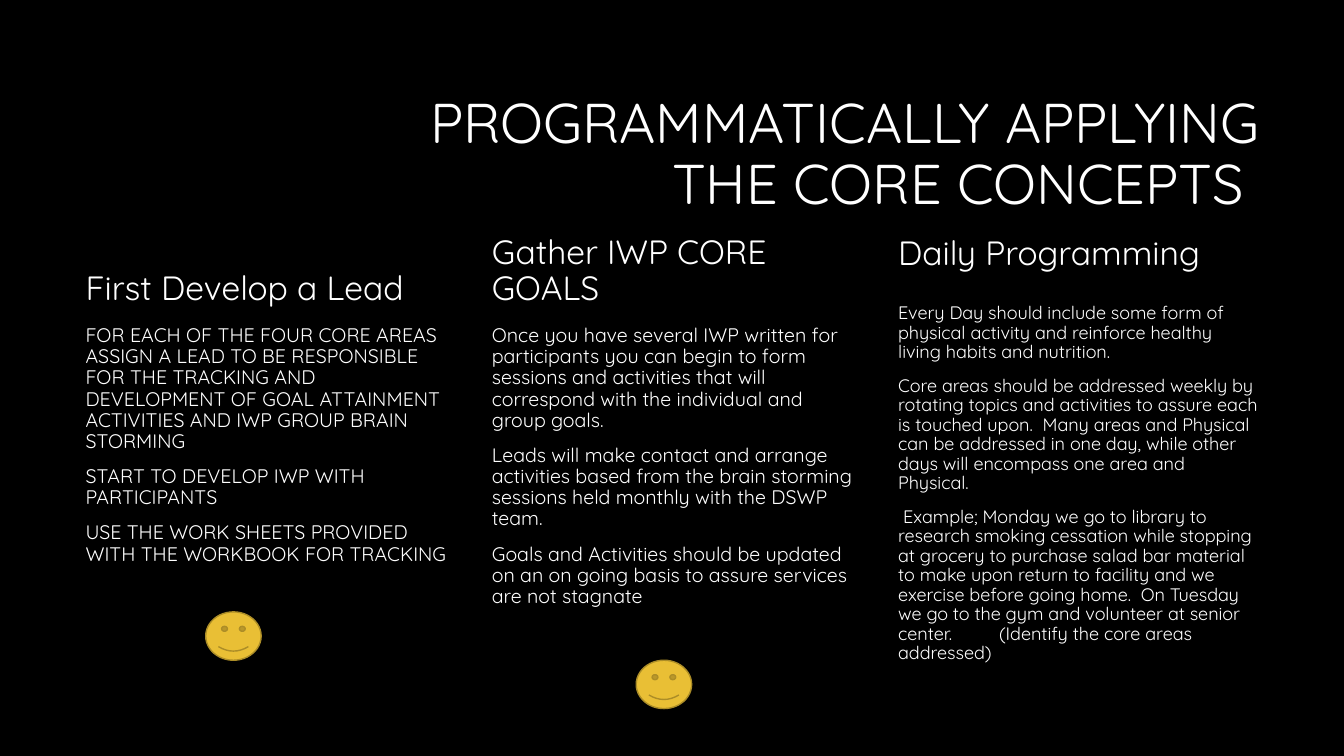
"""Build the slide on applying the core concepts to programming."""
from dataclasses import dataclass

from lxml import etree
from pptx import Presentation
from pptx import util as u
from pptx.dml.color import RGBColor
from pptx.enum import shapes, text
from pptx.oxml.ns import qn

COLORS = {"background": "000000", "text": "FFFFFF", "face": "E9BF35", "outline": "AC8D27"}
FONT = "Quicksand"
COLUMN_WIDTH = 3.78
HEADING_HEIGHT = 0.69
BODY_BOTTOM = 6.8


@dataclass
class TextBlock:
    """Text with its place and format, in inches and points."""
    left: float
    top: float
    width: float
    height: float
    size: float
    paragraphs: list[str]
    anchor: text.MSO_ANCHOR = text.MSO_ANCHOR.TOP
    align: text.PP_ALIGN = text.PP_ALIGN.LEFT


@dataclass
class Column:
    """A heading with its body text."""
    left: float
    heading_top: float
    body_top: float
    body_size: float
    heading: str
    body: list[str]


@dataclass
class Smiley:
    """Top left corner of a smiley face, in inches."""
    left: float
    top: float


COLUMNS = [
    Column(0.75, 2.41, 3.18, 14, "First Develop a Lead", [
        "FOR EACH OF THE FOUR CORE AREAS ASSIGN A LEAD TO BE RESPONSIBLE FOR THE TRACKING "
        "AND DEVELOPMENT OF GOAL ATTAINMENT ACTIVITIES AND IWP GROUP BRAIN STORMING",
        "START TO DEVELOP IWP WITH PARTICIPANTS",
        "USE THE WORK SHEETS PROVIDED WITH THE WORKBOOK FOR TRACKING",
    ]),
    Column(4.78, 2.41, 3.18, 14, "Gather IWP CORE GOALS", [
        "Once you have several IWP written for participants you can begin to form sessions "
        "and activities that will correspond with the individual and group goals.",
        "Leads will make contact and arrange activities based from the brain storming "
        "sessions held monthly with the DSWP team.",
        "Goals and Activities should be updated on an on going basis to assure services "
        "are not stagnate",
    ]),
    Column(8.81, 2.06, 2.97, 12.9, "Daily Programming", [
        "Every Day should include some form of physical activity and reinforce healthy "
        "living habits and nutrition.",
        "Core areas should be addressed weekly by rotating topics and activities to assure "
        "each is touched upon.  Many areas and Physical can be addressed in one day, while "
        "other days will encompass one area and Physical.",
        "Example; Monday we go to library to research smoking cessation while stopping at "
        "grocery to purchase salad bar material to make upon return to facility and we "
        "exercise before going home.  On Tuesday we go to the gym and volunteer at senior "
        "center.\t(Identify the core areas addressed)",
    ]),
]
SMILEYS = [Smiley(2.04, 6.07), Smiley(6.31, 6.55)]


def rgb(name: str) -> RGBColor:
    """Return a named colour."""
    return RGBColor.from_string(COLORS[name])


def add_indent_and_tab(para, indent: float, stop: float) -> None:
    """Indent the first line and set one left tab stop."""
    properties = para._p.get_or_add_pPr()
    properties.set("marL", "0")
    properties.set("indent", str(u.Inches(indent)))
    tabs = etree.SubElement(properties, qn("a:tabLst"))
    etree.SubElement(tabs, qn("a:tab"), pos=str(u.Inches(stop)), algn="l")


def draw_text(page, block: TextBlock) -> None:
    """Draw a block of text."""
    box = page.shapes.add_textbox(*map(u.Inches, (block.left, block.top, block.width, block.height)))
    frame = box.text_frame
    frame.word_wrap = True
    frame.vertical_anchor = block.anchor
    for index, wording in enumerate(block.paragraphs):
        para = frame.add_paragraph() if index else frame.paragraphs[0]
        para.text = wording
        para.alignment = block.align
        para.line_spacing = 0.9
        if index:
            para.space_before = u.Pt(10)
        if "\t" in wording:
            add_indent_and_tab(para, 0.05, 1.03)
        for span in para.runs:
            span.font.name = FONT
            span.font.size = u.Pt(block.size)
            span.font.color.rgb = rgb("text")


def draw_column(page, column: Column) -> None:
    """Draw a heading and the body below it."""
    draw_text(page, TextBlock(column.left, column.heading_top, COLUMN_WIDTH, HEADING_HEIGHT,
                              24, [column.heading], text.MSO_ANCHOR.BOTTOM))
    draw_text(page, TextBlock(column.left, column.body_top, COLUMN_WIDTH,
                              BODY_BOTTOM - column.body_top, column.body_size, column.body))


def draw_smiley(page, smiley: Smiley) -> None:
    """Draw a smiley face."""
    face = page.shapes.add_shape(shapes.MSO_SHAPE.SMILEY_FACE, u.Inches(smiley.left),
                                 u.Inches(smiley.top), u.Inches(0.55), u.Inches(0.48))
    face.shadow.inherit = False
    face.fill.solid()
    face.fill.fore_color.rgb = rgb("face")
    face.line.color.rgb = rgb("outline")
    face.line.width = u.Pt(1)


def main() -> None:
    """Build and save the deck."""
    deck = Presentation()
    deck.slide_width, deck.slide_height = u.Inches(13.33), u.Inches(7.5)
    page = deck.slides.add_slide(deck.slide_layouts[6])
    page.background.fill.solid()
    page.background.fill.fore_color.rgb = rgb("background")
    draw_text(page, TextBlock(3.17, 0.83, 9.42, 1.43, 40,
                              ["PROGRAMMATICALLY APPLYING THE CORE CONCEPTS "],
                              text.MSO_ANCHOR.MIDDLE, text.PP_ALIGN.RIGHT))
    for column in COLUMNS:
        draw_column(page, column)
    for smiley in SMILEYS:
        draw_smiley(page, smiley)
    deck.save("out.pptx")


if __name__ == "__main__":
    main()
